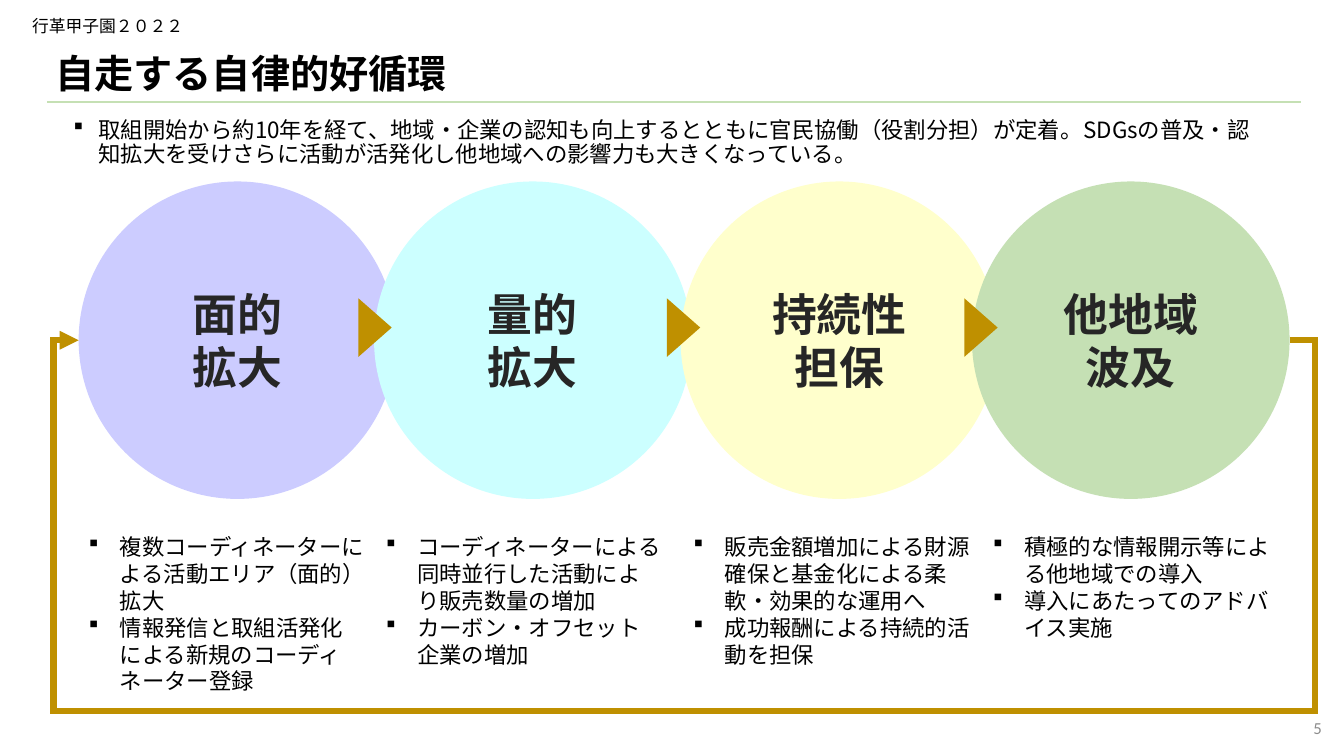
from lxml import etree
from pptx import Presentation
from pptx import util as u
from pptx.dml.color import RGBColor
from pptx.enum import shapes, text
from pptx.oxml.ns import qn

W, H = 13.33, 7.5
JP, SC = "Noto Sans CJK JP", "Noto Sans CJK SC"
GOLD, GREEN, BLACK = "BF9000", "C5E0B4", "000000"
DIAMETER = 3.15
CIRCLE_TOP = 1.8
MID = CIRCLE_TOP + DIAMETER / 2
ARROW_LEN, ARROW_SPAN = 0.33, 0.58

STAGES = [
    (0.78, 0.78, "CCCCFF", "面的\n拡大",
     ["複数コーディネーターによる活動エリア（面的）拡大",
      "情報発信と取組活発化による新規のコーディネーター登録"]),
    (3.71, 3.73, "CCFFFF", "量的\n拡大",
     ["コーディネーターによる同時並行した活動により販売数量の増加",
      "カーボン・オフセット企業の増加"]),
    (6.75, 6.78, "FFFFCC", "持続性\n担保",
     ["販売金額増加による財源確保と基金化による柔軟・効果的な運用へ",
      "成功報酬による持続的活動を担保"]),
    (9.64, 9.75, GREEN, "他地域\n波及",
     ["積極的な情報開示等による他地域での導入",
      "導入にあたってのアドバイス実施"]),
]
ARROW_CENTERS = [3.72, 6.78, 9.73]


def color(value):
    return RGBColor.from_string(value)


def add_xml(parent, tag, **attrs):
    return etree.SubElement(parent, qn(tag), attrs)


def style(tf, size, fill, font=JP, bold=False, align=None, spacing=None):
    for p in tf.paragraphs:
        p.alignment = align
        if spacing:
            p.line_spacing = spacing
        for r in p.runs:
            r.font.size = u.Pt(size)
            r.font.bold = bold
            r.font.color.rgb = color(fill)
            r.font.name = font
            add_xml(r.font._element, "a:ea", typeface=font)


def bullets(tf, indent):
    for p in tf.paragraphs:
        pPr = p._p.get_or_add_pPr()
        pPr.set("marL", str(u.Inches(indent)))
        pPr.set("indent", str(-u.Inches(indent)))
        add_xml(pPr, "a:buFont", typeface="Wingdings")
        add_xml(pPr, "a:buChar", char="§")


def add_text(s, box, words, anchor=text.MSO_ANCHOR.TOP):
    tf = s.shapes.add_textbox(*map(u.Inches, box)).text_frame
    tf.word_wrap = True
    tf.vertical_anchor = anchor
    tf.text = words
    return tf


def add_shape(s, kind, box, fill):
    sp = s.shapes.add_shape(kind, *map(u.Inches, box))
    sp.shadow.inherit = False
    sp.fill.solid()
    sp.fill.fore_color.rgb = color(fill)
    sp.line.fill.background()
    return sp


def header(s, left, top, width):
    middle = text.MSO_ANCHOR.MIDDLE
    style(add_text(s, (left - 0.25, top, 6.5, 0.3), "行革甲子園２０２２"),
          12, BLACK, SC)
    line_y = u.Inches(top + 0.9)
    rule = s.shapes.add_connector(
        shapes.MSO_CONNECTOR.STRAIGHT,
        u.Inches(left), line_y, u.Inches(left + width), line_y)
    rule.line.color.rgb = color(GREEN)
    rule.line.width = u.Pt(1.5)
    add_xml(rule._element.spPr, "a:effectLst")
    tf = add_text(s, (left - 0.02, top + 0.4, 11.45, 0.49),
                  "自走する自律的好循環", middle)
    style(tf, 28, BLACK, bold=True, spacing=0.9)


def summary(s, box):
    tf = add_text(s, box, "取組開始から約10年を経て、地域・企業の認知も向上するとともに"
                  "官民協働（役割分担）が定着。SDGsの普及・認知拡大を受けさらに"
                  "活動が活発化し他地域への影響力も大きくなっている。")
    bullets(tf, 0.25)
    style(tf, 16, BLACK, spacing=0.9)


def stage_circle(s, left, top, fill, name):
    sp = add_shape(s, shapes.MSO_SHAPE.OVAL,
                   (left, top, DIAMETER, DIAMETER), fill)
    tf = sp.text_frame
    tf.vertical_anchor = text.MSO_ANCHOR.MIDDLE
    tf.text = name
    style(tf, 32, "262626", bold=True, align=text.PP_ALIGN.CENTER)


def stage_notes(s, box, notes):
    tf = add_text(s, box, "\n".join(notes))
    bullets(tf, 0.31)
    style(tf, 16, BLACK)


def return_loop(s, start, end, left, right, bottom):
    points = [(start, MID), (right, MID), (right, bottom),
              (left, bottom), (left, MID), (end, MID)]
    points = [(u.Inches(x), u.Inches(y)) for x, y in points]
    fb = s.shapes.build_freeform(*points[0])
    fb.add_line_segments(points[1:], close=False)
    sp = fb.convert_to_shape()
    sp.shadow.inherit = False
    sp.fill.background()
    sp.line.color.rgb = color(GOLD)
    sp.line.width = u.Pt(4.5)
    ln = sp.line._get_or_add_ln()
    add_xml(ln, "a:miter", lim="800000")
    add_xml(ln, "a:tailEnd", type="triangle")


def step_arrow(s, cx, cy):
    sp = add_shape(s, shapes.MSO_SHAPE.ISOSCELES_TRIANGLE,
                   (cx - ARROW_SPAN / 2, cy - ARROW_LEN / 2,
                    ARROW_SPAN, ARROW_LEN), GOLD)
    sp.rotation = 90


def page_number(s, box):
    tf = add_text(s, box, "5", text.MSO_ANCHOR.MIDDLE)
    style(tf, 12, "8C8C8C", "Calibri", align=text.PP_ALIGN.RIGHT)


def main():
    prs = Presentation()
    prs.slide_width, prs.slide_height = u.Inches(W), u.Inches(H)
    s = prs.slides.add_slide(prs.slide_layouts[6])
    header(s, 0.47, 0.11, 12.43)
    page_number(s, (W - 3.12, H - 0.48, 3, 0.4))
    for left, _, fill, name, _ in STAGES:
        stage_circle(s, left, CIRCLE_TOP, fill, name)
    return_loop(s, STAGES[-1][0] + DIAMETER, STAGES[0][0], 0.53, 13.04, 7.05)
    for cx in ARROW_CENTERS:
        step_arrow(s, cx, 3.25)
    for _, left, _, _, notes in STAGES:
        stage_notes(s, (left, 5.24, 2.94, 1.45), notes)
    summary(s, (0.63, 1.13, 11.99, 0.63))
    prs.save("out.pptx")


if __name__ == "__main__":
    main()
